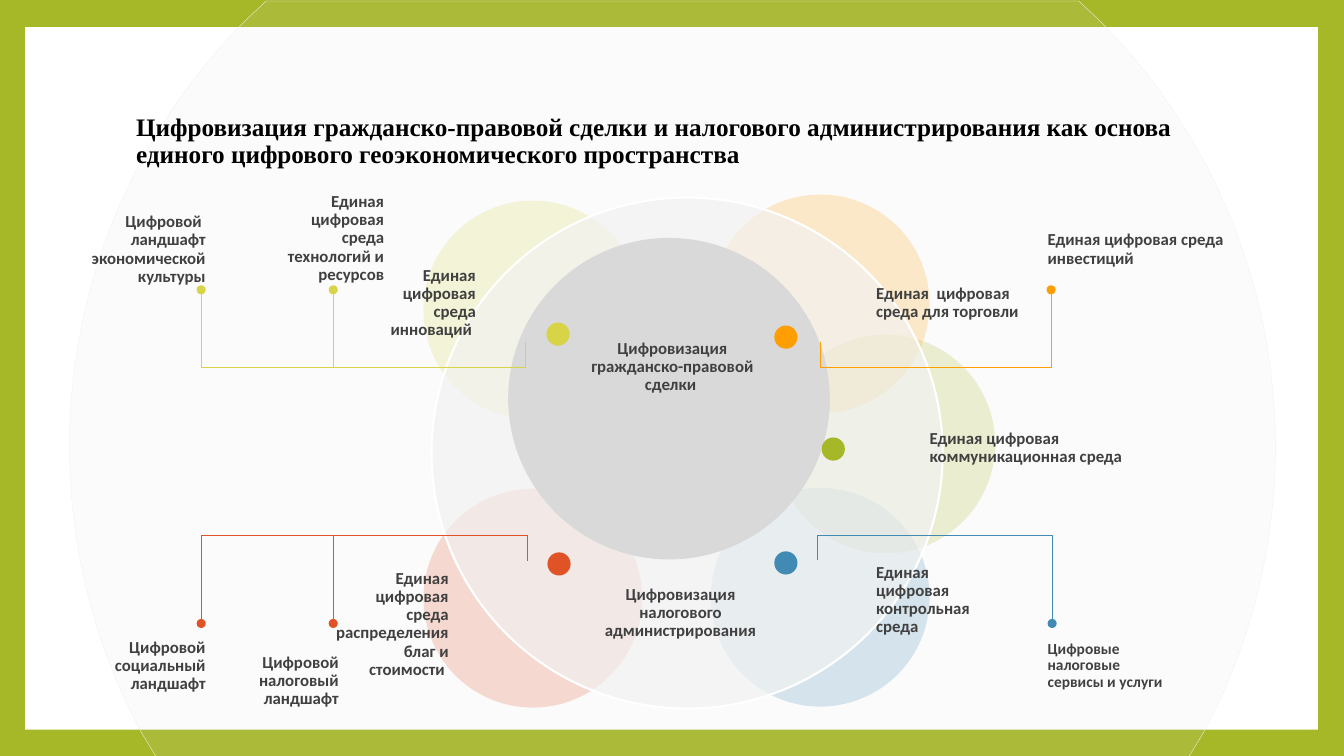
import copy
from dataclasses import dataclass

import lxml.etree
import pptx
import pptx.dml.color
import pptx.enum.shapes
import pptx.enum.text
import pptx.oxml.ns
import pptx.util

PX = 9144
SHAPE = pptx.enum.shapes.MSO_SHAPE
ALIGN = pptx.enum.text.PP_ALIGN
ANCHOR = pptx.enum.text.MSO_ANCHOR
qn = pptx.oxml.ns.qn


@dataclass(frozen=True)
class Theme:
    green: str = "A6B727"
    blue: str = "418AB3"
    orange: str = "FE9E00"
    red: str = "DF5327"
    lime: str = "D7D447"
    white: str = "FFFFFF"
    pale: str = "F2F2F2"
    gray: str = "D9D9D9"
    ink: str = "404040"
    black: str = "000000"
    title_font: str = "Times New Roman"
    label_font: str = "Calibri"
    title_size: int = 18
    label_size: int = 12
    small_size: int = 11


def px(n):
    return pptx.util.Emu(round(n * PX))


def rgb(color):
    return pptx.dml.color.RGBColor.from_string(color)


def write(tf, text, *, font, size, color, align=None, anchor=ANCHOR.MIDDLE):
    tf.word_wrap = True
    tf.vertical_anchor = anchor
    p = tf.paragraphs[0]
    p.alignment = align or ALIGN.LEFT
    p.line_spacing = 0.9
    r = p.add_run()
    r.text = text
    r.font.name = font
    r.font.size = pptx.util.Pt(size)
    r.font.bold = True
    r.font.color.rgb = rgb(color)


class Deck:
    """Draws styled elements on the current slide."""

    def __init__(self, prs, theme):
        self.theme = theme
        self.master = prs.slide_master
        self.s = prs.slides.add_slide(prs.slide_layouts[5])
        fill = self.master.background.fill
        fill.solid()
        fill.fore_color.rgb = rgb(theme.green)

    def paint(self, sp, color, alpha=100, line=None, weight=1):
        sp.shadow.inherit = False
        sp.fill.solid()
        sp.fill.fore_color.rgb = rgb(color)
        if alpha < 100:
            clr = sp.fill._xPr.find(".//" + qn("a:srgbClr"))
            lxml.etree.SubElement(clr, qn("a:alpha"), val=str(alpha * 1000))
        if line:
            sp.line.color.rgb = rgb(line)
            sp.line.width = pptx.util.Pt(weight)
        else:
            sp.line.fill.background()

    def master_panel(self, x, y, w, h, color):
        sp = self.s.shapes.add_shape(SHAPE.RECTANGLE, px(x), px(y), px(w), px(h))
        self.paint(sp, color)
        self.master.shapes._spTree.insert(2, sp._element)

    def circle(self, x, y, d, color, **style):
        sp = self.s.shapes.add_shape(SHAPE.OVAL, px(x), px(y), px(d), px(d))
        self.paint(sp, color, **style)

    def symmetric_outline(self, axis, right, degrees, color, **style):
        left = [(2 * axis - x, y) for x, y in reversed(right)]
        points = [(px(x), px(y)) for x, y in right + left]
        fb = self.s.shapes.build_freeform(*points[-1])
        fb.add_line_segments(points[:-1], close=True)
        sp = fb.convert_to_shape()
        lines = sp._element.findall(".//" + qn("a:lnTo"))
        for degree in [1] + degrees + [1] + degrees[:0:-1]:
            group, lines = lines[:degree], lines[degree:]
            if degree == 3:
                curve = lxml.etree.Element(qn("a:cubicBezTo"))
                group[0].addprevious(curve)
                for step in group:
                    curve.append(copy.deepcopy(step[0]))
                    step.getparent().remove(step)
        self.paint(sp, color, **style)

    def title(self, x, y, w, h, text):
        sp = self.s.shapes.title
        sp.left, sp.top, sp.width, sp.height = px(x), px(y), px(w), px(h)
        self.s.shapes._spTree.append(sp._element)
        t = self.theme
        write(sp.text_frame, text, font=t.title_font, size=t.title_size, color=t.black)

    def label(self, x, y, w, h, text, size=None, **style):
        tf = self.s.shapes.add_textbox(px(x), px(y), px(w), px(h)).text_frame
        tf.margin_left = tf.margin_right = tf.margin_top = tf.margin_bottom = 0
        t = self.theme
        write(tf, text, font=t.label_font, size=size or t.label_size, color=t.ink, **style)

    def bracket(self, x1, y1, x2, y2, color, reach):
        dx, dy = x2 - x1, y2 - y1
        cx, cy = (x1 + x2) / 2, (y1 + y2) / 2
        sign = 1 if dy > 0 else -1
        u, v = abs(dy) / 2, sign * dx / 2
        c = self.s.shapes.add_connector(
            pptx.enum.shapes.MSO_CONNECTOR.ELBOW,
            px(cx + u), px(cy - v), px(cx - u), px(cy + v))
        c.line.color.rgb = rgb(color)
        c.line.width = pptx.util.Pt(0.79)
        spPr = c._element.spPr
        spPr.find(qn("a:xfrm")).set("rot", "16200000" if dy > 0 else "5400000")
        geom = spPr.find(qn("a:prstGeom"))
        av = geom.find(qn("a:avLst"))
        if av is None:
            av = lxml.etree.SubElement(geom, qn("a:avLst"))
        adj = -round(reach * 100000)
        lxml.etree.SubElement(av, qn("a:gd"), name="adj1", fmla=f"val {adj}")
        lxml.etree.SubElement(spPr, qn("a:effectLst"))


def main():
    prs = pptx.Presentation()
    prs.slide_width, prs.slide_height = px(1333), px(750)
    t = Theme()
    deck = Deck(prs, t)

    deck.master_panel(25, 27, 1282, 697, t.white)
    right_edge = [(1070, 1), (1090, 20), (1198, 128), (1265, 278), (1265, 443),
                  (1265, 546), (1239, 643), (1193, 728), (1179, 751)]
    deck.symmetric_outline(667, right_edge, [1, 3, 3, 1], t.gray,
                           alpha=10, line=t.pale, weight=0.25)

    petals = [(770, 332, t.green), (705, 484, t.blue), (705, 193, t.orange),
              (420, 485, t.red), (420, 199, t.lime)]
    for x, y, color in petals:
        deck.circle(x, y, 217, color, alpha=20)
    deck.circle(428, 196, 507, t.pale, alpha=68, line=t.white, weight=1.5)
    deck.circle(504, 236, 319, t.gray)

    deck.title(125, 67, 1080, 148,
               "Цифровизация гражданско-правовой сделки и налогового администрирования "
               "как основа единого цифрового геоэкономического пространства")

    labels = [
        (85, 210, 119, 75, "Цифровой  ландшафт экономической культуры", ALIGN.RIGHT),
        (1039, 210, 178, 75, "Единая цифровая среда инвестиций", ALIGN.LEFT),
        (354, 261, 118, 79, "Единая цифровая среда инноваций ", ALIGN.RIGHT),
        (869, 261, 146, 79, "Единая  цифровая среда для торговли", ALIGN.LEFT),
        (922, 405, 193, 79, "Единая цифровая  коммуникационная среда", ALIGN.LEFT),
        (578, 571, 194, 75, "Цифровизация налогового администрирования", ALIGN.CENTER),
        (327, 556, 118, 127, "Единая цифровая среда распределения благ и стоимости ",
         ALIGN.RIGHT),
        (869, 556, 118, 79, "Единая цифровая контрольная среда", ALIGN.LEFT),
        (86, 623, 118, 75, "Цифровой социальный ландшафт", ALIGN.RIGHT),
        (218, 630, 118, 91, "Цифровой налоговый ландшафт", ALIGN.RIGHT),
        (263, 197, 118, 79, "Единая цифровая среда технологий и ресурсов", ALIGN.RIGHT),
    ]
    for x, y, w, h, text, align in labels:
        deck.label(x, y, w, h, text, align=align)
    deck.label(570, 337, 194, 67, "Цифровизация гражданско-правовой сделки ",
               align=ALIGN.CENTER, anchor=ANCHOR.TOP)
    deck.label(1039, 623, 122, 75, "Цифровые налоговые сервисы и услуги", size=t.small_size)

    hubs = [(542, 320, t.lime), (768, 323, t.orange), (768, 547, t.blue),
            (815, 434, t.green), (543, 548, t.red)]
    for x, y, color in hubs:
        deck.circle(x, y, 23, color)

    branches = [(521, 331, t.lime), (521, 200, t.lime), (523, 331, t.red),
                (523, 200, t.red), (814, 1043, t.orange), (811, 1044, t.blue)]
    for x1, x2, color in branches:
        upper = color in (t.lime, t.orange)
        y1, y2, dot_y, reach = (339, 292, 283, 0.54) if upper else (556, 614, 614, 0.43)
        deck.bracket(x1, y1, x2, y2, color, reach)
        deck.circle(x2 - 5, dot_y, 9, color)

    prs.save("out.pptx")


if __name__ == "__main__":
    main()
